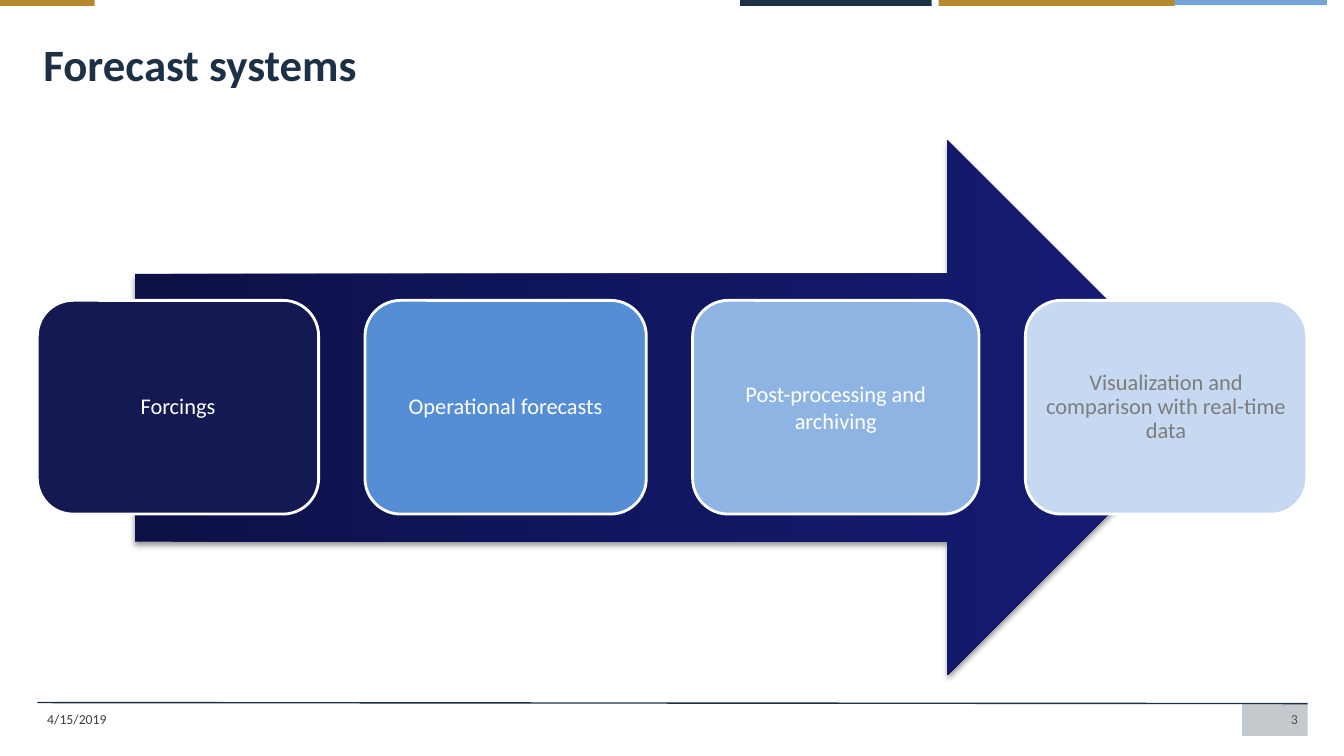
import pptx
import pptx.util
import pptx.dml.color
import pptx.enum.shapes
import pptx.enum.text
import pptx.oxml
import pptx.oxml.ns

Inches = pptx.util.Inches
Pt = pptx.util.Pt
KIND = pptx.enum.shapes.MSO_SHAPE
ALIGN = pptx.enum.text.PP_ALIGN
ANCHOR = pptx.enum.text.MSO_ANCHOR

TITLE = "Forecast systems"
NAVY, GOLD, SKY, WHITE = "1C3046", "B5892D", "75A5D8", "FFFFFF"
RULE = "1D2F45"

# left, width, height, colour
BARS = [
    (7.34, 1.9, 0.06, NAVY),
    (11.49, 1.67, 0.05, SKY),
    (9.31, 2.34, 0.06, GOLD),
    (0, 0.94, 0.06, GOLD),
]
# text, width, fill, text colour, line spacing
STEPS = [
    ("Forcings", 2.79, "141952", WHITE, 0.9),
    ("Operational forecasts", 2.79, "558ED5", WHITE, 0.9),
    ("Post-processing and archiving", 2.84, "8EB4E3", WHITE, 1.0),
    ("Visualization and comparison with real-time data", 2.79, "C6D9F1", "7C7C7C", 0.9),
]
# text, left, width, alignment, colour
FOOT = [
    ("3", 9.56, 3.41, ALIGN.RIGHT, "515151"),
    ("4/15/2019", 0.37, 3.11, ALIGN.LEFT, "3D3D3D"),
]
STOPS = [(0, "0C1045"), (50, "121762"), (100, "151C74")]
LEFT, RIGHT, BASE = 0.37, 12.97, 6.98
STEP_TOP, STEP_HIGH, GAP = 2.98, 2.12, 0.46


def rgb(code):
    return pptx.dml.color.RGBColor.from_string(code)


def box(slide, kind, area, fill):
    shape = slide.shapes.add_shape(kind, *map(Inches, area))
    shape.shadow.inherit = False
    shape.fill.solid()
    shape.fill.fore_color.rgb = rgb(fill)
    shape.line.fill.background()
    return shape


def write(shape, text, size, color, align, anchor, inset=(0.1, 0.05), bold=False, gap=1.0):
    frame = shape.text_frame
    form = {
        "word_wrap": True,
        "auto_size": pptx.enum.text.MSO_AUTO_SIZE.NONE,
        "vertical_anchor": anchor,
        "margin_left": Inches(inset[0]),
        "margin_right": Inches(inset[0]),
        "margin_top": Inches(inset[1]),
        "margin_bottom": Inches(inset[1]),
    }
    for name, value in form.items():
        setattr(frame, name, value)
    frame.text = text
    para = frame.paragraphs[0]
    para.alignment = align
    para.line_spacing = gap
    para.space_before = Pt(0)
    font = para.runs[0].font
    for name, value in {"name": "Calibri", "size": Pt(size), "bold": bold}.items():
        setattr(font, name, value)
    font.color.rgb = rgb(color)


def parse(xml):
    space = pptx.oxml.ns.nsdecls("a")
    return pptx.oxml.parse_xml(xml.replace(">", f" {space}>", 1))


def shade(shape):
    """Give the shape a left-to-right gradient and a soft shadow below."""
    stops = "".join(
        f'<a:gs pos="{at * 1000}"><a:srgbClr val="{code}"/></a:gs>' for at, code in STOPS
    )
    props = shape.element.spPr
    old = props.find(pptx.oxml.ns.qn("a:solidFill"))
    props.replace(old, parse(
        f'<a:gradFill><a:gsLst>{stops}</a:gsLst><a:lin ang="0" scaled="0"/></a:gradFill>'
    ))
    glow = props.find(pptx.oxml.ns.qn("a:effectLst"))
    glow.append(parse(
        f'<a:outerShdw blurRad="{Pt(4)}" dist="{Pt(3)}" dir="5400000" rotWithShape="0">'
        '<a:srgbClr val="000000"><a:alpha val="40000"/></a:srgbClr></a:outerShdw>'
    ))


def frame(slide):
    """Draw the bars on top and the footer."""
    line = slide.shapes.add_connector(
        pptx.enum.shapes.MSO_CONNECTOR.STRAIGHT,
        Inches(RIGHT), Inches(BASE), Inches(LEFT), Inches(BASE - 0.01),
    )
    line.line.color.rgb = rgb(RULE)
    line.line.width = Pt(1)
    line.element.spPr.append(parse("<a:effectLst></a:effectLst>"))

    tab = box(slide, KIND.RECTANGLE, (RIGHT - 0.65, BASE, 0.65, 0.32), RULE)
    tint = tab.element.spPr.find(pptx.oxml.ns.qn("a:solidFill"))[0]
    tint.append(parse('<a:alpha val="26000"></a:alpha>'))

    for left, wide, high, color in BARS:
        box(slide, KIND.RECTANGLE, (left, 0, wide, high), color)
    for text, left, wide, align, color in FOOT:
        note = slide.shapes.add_textbox(*map(Inches, (left, BASE, wide, 0.31)))
        write(note, text, 9.8, color, align, ANCHOR.MIDDLE)


def flow(slide):
    """Draw the arrow and the steps across it."""
    shade(box(slide, KIND.RIGHT_ARROW, (1.34, 1.39, 10.71, 5.31), STOPS[0][1]))
    left = LEFT
    for text, wide, fill, color, gap in STEPS:
        step = box(slide, KIND.ROUNDED_RECTANGLE, (left, STEP_TOP, wide, STEP_HIGH), fill)
        step.line.color.rgb = rgb(WHITE)
        step.line.width = Pt(2)
        write(step, text, 16, color, ALIGN.CENTER, ANCHOR.MIDDLE, (0.07, 0.07), gap=gap)
        left += wide + GAP


def main():
    deck = pptx.Presentation()
    deck.slide_width, deck.slide_height = Inches(13.33), Inches(7.5)
    slide = deck.slides.add_slide(deck.slide_layouts[5])
    title = slide.shapes.title
    area = (0.33, 0.31, 12.63, 0.94)
    for name, value in zip(("left", "top", "width", "height"), area):
        setattr(title, name, Inches(value))
    write(title, TITLE, 32, NAVY, ALIGN.LEFT, ANCHOR.TOP, bold=True)
    frame(slide)
    flow(slide)
    deck.save("out.pptx")


if __name__ == "__main__":
    main()
